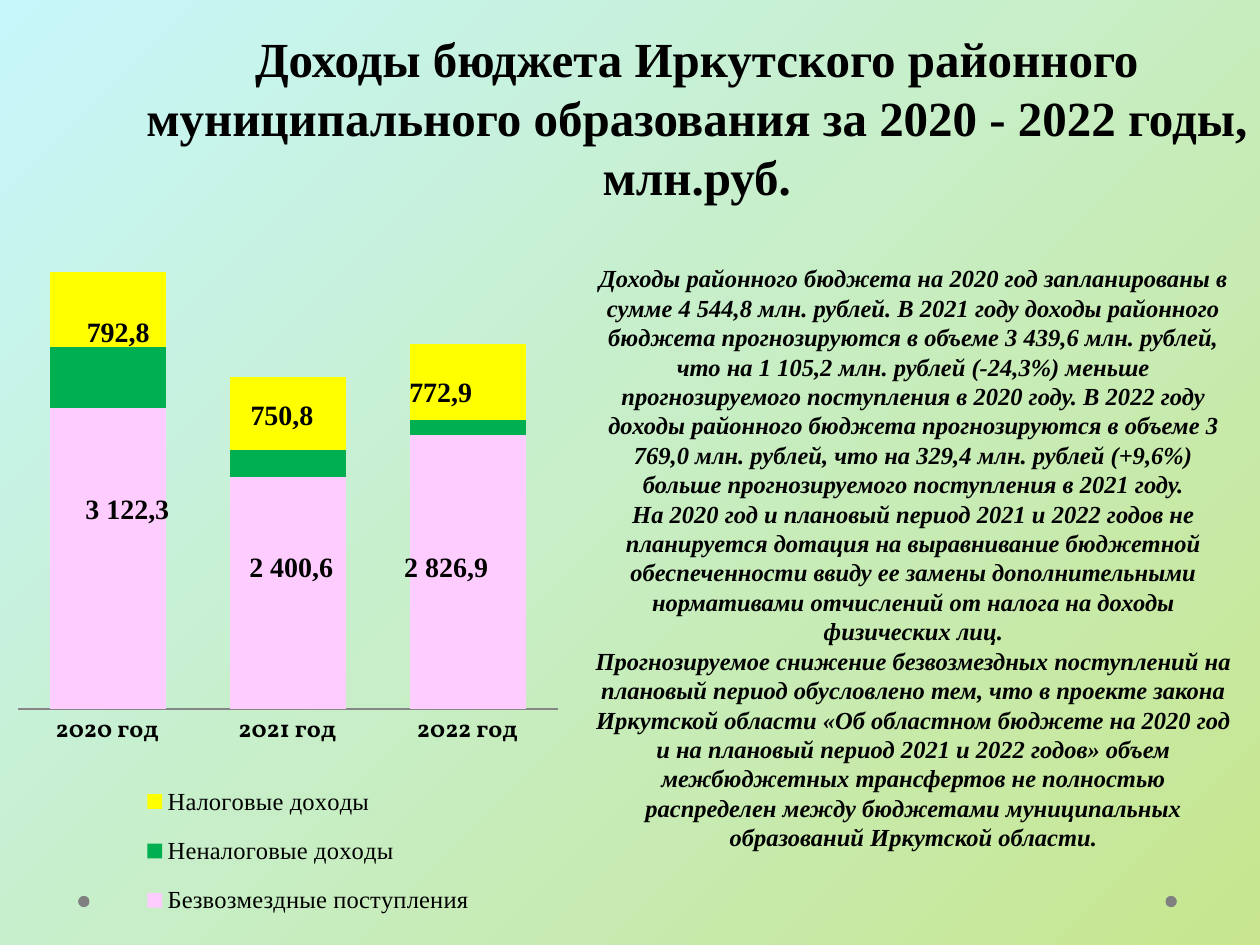
from lxml import etree
from pptx import Presentation
from pptx.chart.data import CategoryChartData
from pptx.dml.color import RGBColor
from pptx.enum.chart import XL_CHART_TYPE, XL_LEGEND_POSITION, XL_TICK_MARK
from pptx.enum.shapes import MSO_SHAPE
from pptx.enum.text import MSO_ANCHOR, MSO_AUTO_SIZE, PP_ALIGN
from pptx.oxml import parse_xml
from pptx.oxml.ns import nsdecls
from pptx.util import Inches, Pt

STACKED = XL_CHART_TYPE.COLUMN_STACKED
RIGHT = XL_LEGEND_POSITION.RIGHT
NO_TICK = XL_TICK_MARK.NONE
OVAL = MSO_SHAPE.OVAL
BOTTOM = MSO_ANCHOR.BOTTOM
NO_FIT = MSO_AUTO_SIZE.NONE
GROW = MSO_AUTO_SIZE.SHAPE_TO_FIT_TEXT
LEFT, CENTER = PP_ALIGN.LEFT, PP_ALIGN.CENTER
SERIF = "Times New Roman"


def color(code):
    return RGBColor.from_string(code)


def write(frame, *texts, size=16, italic=False, align=LEFT, fit=GROW):
    """Fill a text frame with one bold black paragraph per text."""
    frame.word_wrap = True
    frame.auto_size = fit
    for i, text in enumerate(texts):
        para = frame.add_paragraph() if i else frame.paragraphs[0]
        para.alignment = align
        run = para.add_run()
        run.text = text
        font = run.font
        font.name, font.size = SERIF, Pt(size)
        font.bold, font.italic = True, italic
        font.color.rgb = color("000000")


prs = Presentation()
prs.slide_width, prs.slide_height = Inches(10), Inches(7.5)
slide = prs.slides.add_slide(prs.slide_layouts[5])
shapes = slide.shapes

# Background
back = slide.background.fill
back.gradient()
back.gradient_angle = 315
for stop, code in zip(back.gradient_stops, ("C7F6FB", "C7E68F")):
    stop.color.rgb = color(code)

# Corner dots
for left in (9.25, 0.62):
    dot = shapes.add_shape(OVAL, Inches(left), Inches(7.11), Inches(0.09), Inches(0.09))
    dot.shadow.inherit = False
    dot.fill.solid()
    dot.fill.fore_color.rgb = color("808080")
    dot.line.fill.background()

# Title
title = shapes.title
title.left, title.top = Inches(1.06), Inches(0.6)
title.width, title.height = Inches(8.94), Inches(1.08)
title.text_frame.vertical_anchor = BOTTOM
write(
    title.text_frame,
    "Доходы бюджета Иркутского районного муниципального образования за 2020 - 2022 годы, млн.руб.",
    size=28, align=CENTER, fit=NO_FIT,
)

# Commentary
note = shapes.add_textbox(Inches(4.61), Inches(2.04), Inches(5.28), Inches(4.81))
write(
    note.text_frame,
    "Доходы районного бюджета на 2020 год запланированы в сумме 4 544,8 млн. рублей. "
    "В 2021 году доходы районного бюджета прогнозируются в объеме 3 439,6 млн. рублей, "
    "что на 1 105,2 млн. рублей (-24,3%) меньше прогнозируемого поступления в 2020 году. "
    "В 2022 году доходы районного бюджета прогнозируются в объеме 3 769,0 млн. рублей, "
    "что на 329,4 млн. рублей (+9,6%) больше прогнозируемого поступления в 2021 году.",
    "На 2020 год и плановый период 2021 и 2022 годов не планируется дотация на "
    "выравнивание бюджетной обеспеченности ввиду ее замены дополнительными "
    "нормативами отчислений от налога на доходы физических лиц.",
    "Прогнозируемое снижение безвозмездных поступлений на плановый период обусловлено "
    "тем, что в проекте закона Иркутской области «Об областном бюджете на 2020 год и на "
    "плановый период 2021 и 2022 годов» объем межбюджетных трансфертов не полностью "
    "распределен между бюджетами муниципальных образований Иркутской области.",
    size=14, italic=True, align=CENTER,
)

# Income chart
series = [
    ("Безвозмездные поступления", (100, 77, 91), "FFCCFF"),
    ("Неналоговые доходы", (20, 9, 5), "00B050"),
    ("Налоговые доходы", (25, 24, 25), "FFFF00"),
]
data = CategoryChartData()
data.categories = ["2020 год", "2021 год", "2022 год"]
for name, values, code in series:
    data.add_series(name, values)
chart = shapes.add_chart(
    STACKED, Inches(0), Inches(1.8), Inches(4.66), Inches(5.63), data
).chart
chart.has_title = False
chart.font.name, chart.font.size = "Vollkorn", Pt(10)
chart.font.color.rgb = color("000000")

plot = chart.plots[0]
plot.gap_width, plot.overlap = 55, 100
plot.vary_by_categories = False
for bar, (name, values, code) in zip(plot.series, series):
    bar.format.fill.solid()
    bar.format.fill.fore_color.rgb = color(code)

axis = chart.category_axis
axis.major_tick_mark = axis.minor_tick_mark = NO_TICK
axis.format.line.color.rgb = color("868686")
axis.tick_labels.font.size = Pt(14)
axis.tick_labels.font.bold = True
scale = chart.value_axis
scale.visible = False
scale.has_major_gridlines = False
scale.minimum_scale, scale.maximum_scale = 0, 160

chart.has_legend = True
legend = chart.legend
legend.position = RIGHT
legend.include_in_layout = False
legend.font.name, legend.font.size = SERIF, Pt(14)
legend.font.color.rgb = color("000000")

# Fixed places for the plot and the legend, as shares of the chart
area = chart._chartSpace.chart.plotArea
key = legend._element
for part, index, inner, box in (
    (area, 0, True, (0.03, 0, 0.92, 0.68)),
    (key, 1, False, (0.2, 0.76, 0.65, 0.24)),
):
    for old in part.findall("{*}layout"):
        part.remove(old)
    layout = parse_xml(f"<c:layout {nsdecls('c')}><c:manualLayout/></c:layout>")
    rules = [("layoutTarget", "inner")] if inner else []
    rules += [("xMode", "edge"), ("yMode", "edge"), *zip("xywh", box)]
    space = etree.QName(layout).namespace
    for tag, value in rules:
        etree.SubElement(layout[0], f"{{{space}}}{tag}", val=str(value))
    part.insert(index, layout)

# Bar labels
for left, top, text in (
    (0.59, 2.45, "792,8"),
    (0.58, 3.85, "3 122,3"),
    (1.89, 3.11, "750,8"),
    (1.88, 4.31, "2 400,6"),
    (3.15, 2.92, "772,9"),
    (3.11, 4.31, "2 826,9"),
):
    label = shapes.add_textbox(Inches(left), Inches(top), Inches(0.89), Inches(0.37))
    write(label.text_frame, text)

prs.save("out.pptx")
